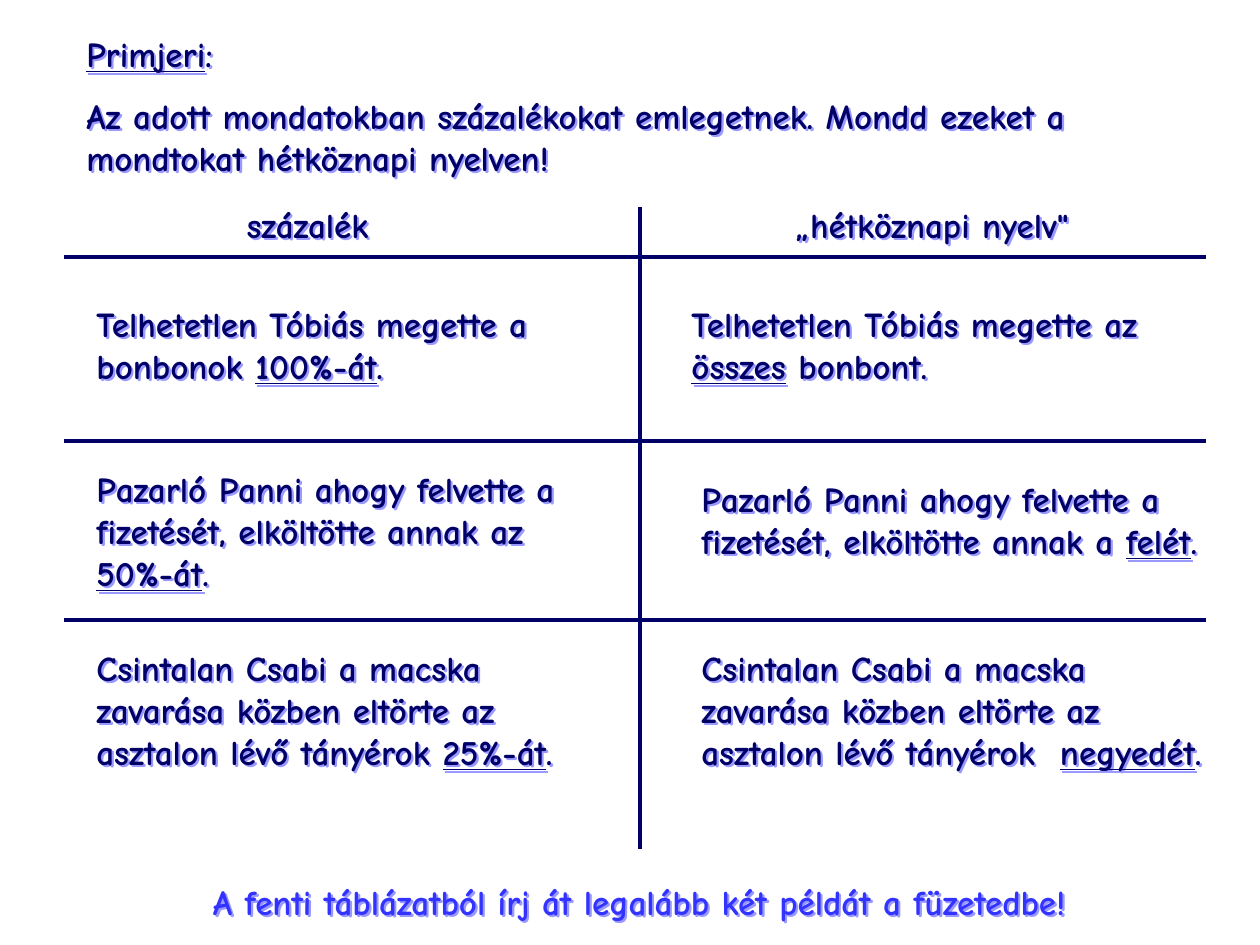
from dataclasses import dataclass

from lxml.etree import SubElement
from pptx import Presentation
from pptx.dml.color import RGBColor
from pptx.enum.shapes import MSO_CONNECTOR
from pptx.enum.text import PP_ALIGN
from pptx.oxml.ns import qn
from pptx.util import Pt


@dataclass(frozen=True)
class Theme:
    font: str = "Comic Neue"
    size: int = 20
    navy: str = "000066"
    blue: str = "3333FF"
    shadow: str = "9999FF"
    rule: float = 2.25


theme = Theme()
PX = 914400 // 126


def add_text(x, y, w, h, parts, align=PP_ALIGN.LEFT, color=theme.navy):
    sp = slide.shapes.add_textbox(x * PX, y * PX, w * PX, h * PX)
    effects = SubElement(sp._element.spPr, qn("a:effectLst"))
    shadow = SubElement(effects, qn("a:outerShdw"), dist="22000", dir="2700000", algn="ctr", rotWithShape="0")
    SubElement(shadow, qn("a:srgbClr"), val=theme.shadow)
    tf = sp.text_frame
    tf.word_wrap = True
    p = tf.paragraphs[0]
    p.alignment = align
    for text, underlined in parts:
        r = p.add_run()
        r.text = text
        r.font.name = theme.font
        r.font.size = Pt(theme.size)
        r.font.bold = True
        r.font.underline = underlined
        r.font.color.rgb = RGBColor.from_string(color)


def add_rule(x1, y1, x2, y2):
    line = slide.shapes.add_connector(MSO_CONNECTOR.STRAIGHT, x1 * PX, y1 * PX, x2 * PX, y2 * PX)
    line.line.color.rgb = RGBColor.from_string(theme.navy)
    line.line.width = Pt(theme.rule)
    SubElement(line._element.spPr, qn("a:effectLst"))


prs = Presentation()
prs.slide_width = 1260 * PX
prs.slide_height = 945 * PX
slide = prs.slides.add_slide(prs.slide_layouts[6])

add_text(74, 26, 238, 54, [("Primjeri", True), (":", False)])
add_text(74, 88, 1091, 97, [
    ("Az adott mondatokban százalékokat emlegetnek. Mondd ezeket a mondtokat hétköznapi nyelven!", False),
])

for y in (257, 441, 620):
    add_rule(64, y, 1206, y)
add_rule(640, 207, 640, 849)

for x, w, heading in ((154, 307, "százalék"), (748, 367, "„hétköznapi nyelv\"")):
    add_text(x, 197, w, 54, [(heading, False)], PP_ALIGN.CENTER)

examples = [
    (84, 296, 97, "Telhetetlen Tóbiás megette a bonbonok ", "100%-át", "."),
    (679, 296, 97, "Telhetetlen Tóbiás megette az ", "összes", " bonbont."),
    (84, 461, 140, "Pazarló Panni ahogy felvette a fizetését, elköltötte annak az ", "50%-át", "."),
    (689, 471, 140, "Pazarló Panni ahogy felvette a fizetését, elköltötte annak a ", "felét", "."),
    (84, 640, 183, "Csintalan Csabi a macska zavarása közben eltörte az asztalon lévő tányérok ", "25%-át", "."),
    (689, 640, 183, "Csintalan Csabi a macska zavarása közben eltörte az asztalon lévő tányérok  ", "negyedét", "."),
]
for x, y, h, before, key, after in examples:
    add_text(x, y, 536, h, [(before, False), (key, True), (after, False)])

add_text(94, 874, 1091, 54, [
    ("A fenti táblázatból írj át legalább két példát a füzetedbe!", False),
], PP_ALIGN.CENTER, theme.blue)

prs.save("out.pptx")
